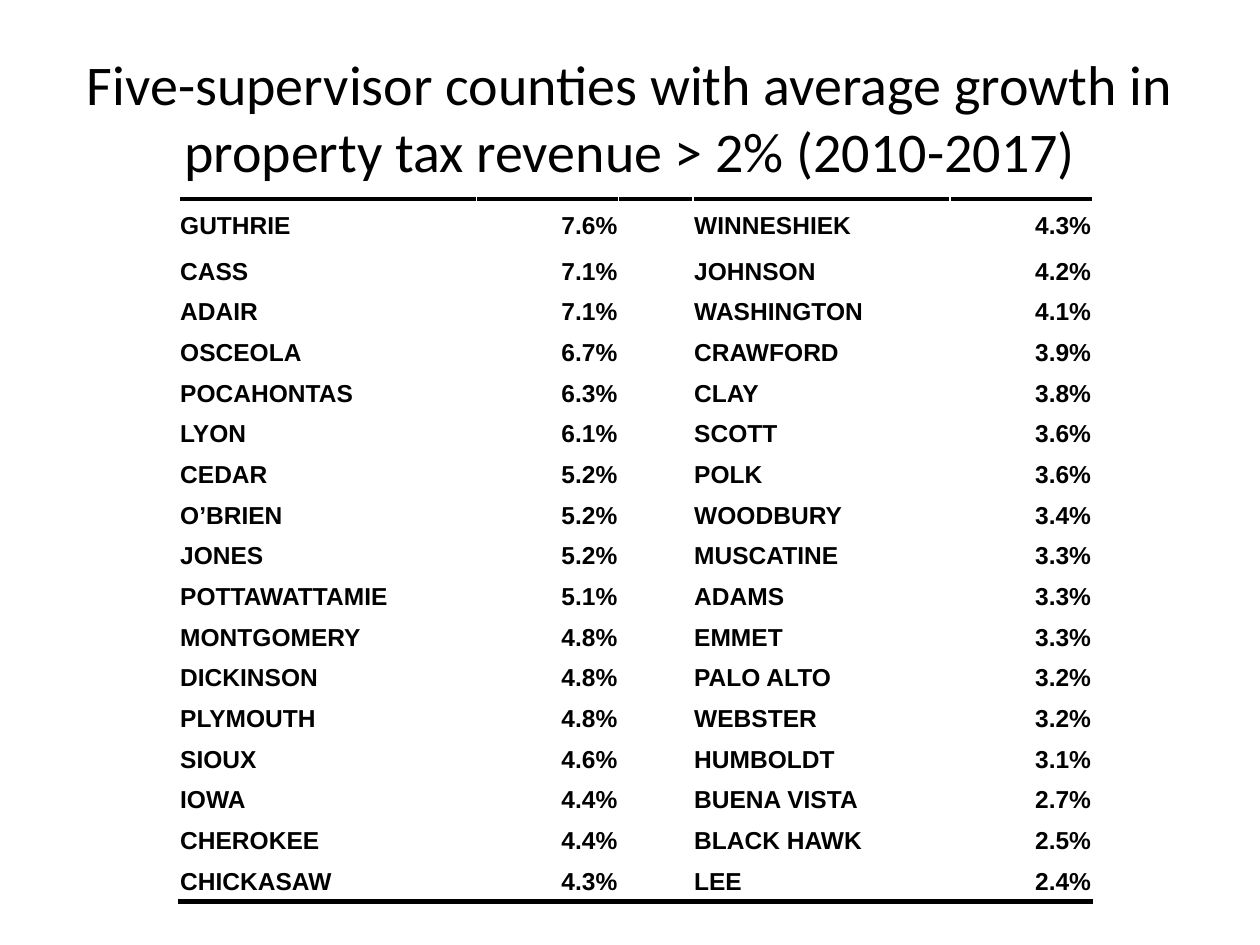
from dataclasses import dataclass

from lxml.etree import SubElement
from pptx import Presentation
from pptx.dml.color import RGBColor
from pptx.enum.text import MSO_ANCHOR, PP_ALIGN
from pptx.oxml import parse_xml
from pptx.oxml.ns import nsdecls, qn
from pptx.util import Inches, Pt


@dataclass(frozen=True)
class Theme:
    ink: str = "000000"
    paper: str = "FFFFFF"
    title_font: str = "Calibri"
    table_font: str = "Arial"
    title_size: int = 32
    table_size: int = 14
    rule_width: int = 3


THEME = Theme()
TITLE = "Five-supervisor counties with average growth in property tax revenue > 2% (2010-2017)"
COUNTIES = [
    ("GUTHRIE", "7.6%"), ("CASS", "7.1%"), ("ADAIR", "7.1%"),
    ("OSCEOLA", "6.7%"), ("POCAHONTAS", "6.3%"), ("LYON", "6.1%"),
    ("CEDAR", "5.2%"), ("O’BRIEN", "5.2%"), ("JONES", "5.2%"),
    ("POTTAWATTAMIE", "5.1%"), ("MONTGOMERY", "4.8%"), ("DICKINSON", "4.8%"),
    ("PLYMOUTH", "4.8%"), ("SIOUX", "4.6%"), ("IOWA", "4.4%"),
    ("CHEROKEE", "4.4%"), ("CHICKASAW", "4.3%"),
    ("WINNESHIEK", "4.3%"), ("JOHNSON", "4.2%"), ("WASHINGTON", "4.1%"),
    ("CRAWFORD", "3.9%"), ("CLAY", "3.8%"), ("SCOTT", "3.6%"),
    ("POLK", "3.6%"), ("WOODBURY", "3.4%"), ("MUSCATINE", "3.3%"),
    ("ADAMS", "3.3%"), ("EMMET", "3.3%"), ("PALO ALTO", "3.2%"),
    ("WEBSTER", "3.2%"), ("HUMBOLDT", "3.1%"), ("BUENA VISTA", "2.7%"),
    ("BLACK HAWK", "2.5%"), ("LEE", "2.4%"),
]
COLUMN_WIDTHS = (2.36, 1.13, 0.59, 2.04, 1.13)
VALUE_COLUMNS = (1, 4)
FIRST_ROW_HEIGHT = 0.41


def set_font(p, name, size, bold=False):
    p.font.name = name
    p.font.size = Pt(size)
    p.font.bold = bold
    p.font.color.rgb = RGBColor.from_string(THEME.ink)


def add_rule(cell, side):
    ln = parse_xml(f'<a:{side} {nsdecls("a")} w="{Pt(THEME.rule_width)}"/>')
    fill = SubElement(ln, qn("a:solidFill"))
    SubElement(fill, qn("a:srgbClr"), val=THEME.ink)
    cell._tc.get_or_add_tcPr().insert(0, ln)


def fill_cell(cell, text, align):
    cell.fill.background()
    cell.vertical_anchor = MSO_ANCHOR.MIDDLE
    cell.margin_left = cell.margin_right = cell.margin_top = Inches(0.01)
    cell.margin_bottom = 0
    p = cell.text_frame.paragraphs[0]
    p.alignment = align
    set_font(p, THEME.table_font, THEME.table_size, bold=True)
    if text:
        p.add_run().text = text


def place_title(s, left, top, width, height):
    title = s.shapes.title
    title.left, title.top = Inches(left), Inches(top)
    title.width, title.height = Inches(width), Inches(height)
    tf = title.text_frame
    tf.text = TITLE
    tf.word_wrap = True
    tf.vertical_anchor = MSO_ANCHOR.MIDDLE
    p = tf.paragraphs[0]
    p.alignment = PP_ALIGN.CENTER
    set_font(p, THEME.title_font, THEME.title_size)


def place_county_table(s, left, top, width, height):
    count = len(COUNTIES) // 2
    frame = s.shapes.add_table(count, len(COLUMN_WIDTHS), Inches(left),
                               Inches(top), Inches(width), Inches(height))
    table = frame.table
    table.first_row = table.horz_banding = False
    for column, column_width in zip(table.columns, COLUMN_WIDTHS):
        column.width = Inches(column_width)
    row_height = (height - FIRST_ROW_HEIGHT) / (count - 1)
    for i, row in enumerate(table.rows):
        row.height = Inches(row_height if i else FIRST_ROW_HEIGHT)
        texts = (*COUNTIES[i], "", *COUNTIES[i + count])
        for j, text in enumerate(texts):
            align = PP_ALIGN.RIGHT if j in VALUE_COLUMNS else PP_ALIGN.LEFT
            fill_cell(table.cell(i, j), text, align)
    for j in range(len(COLUMN_WIDTHS)):
        add_rule(table.cell(0, j), "lnT")
        add_rule(table.cell(count - 1, j), "lnB")


def main():
    prs = Presentation()
    prs.slide_width, prs.slide_height = Inches(10), Inches(7.5)
    s = prs.slides.add_slide(prs.slide_layouts[5])
    s.background.fill.solid()
    s.background.fill.fore_color.rgb = RGBColor.from_string(THEME.paper)
    place_title(s, 0.5, 0.3, 9, 1.25)
    place_county_table(s, 1.42, 1.58, 7.25, 5.58)
    prs.save("out.pptx")


if __name__ == "__main__":
    main()
